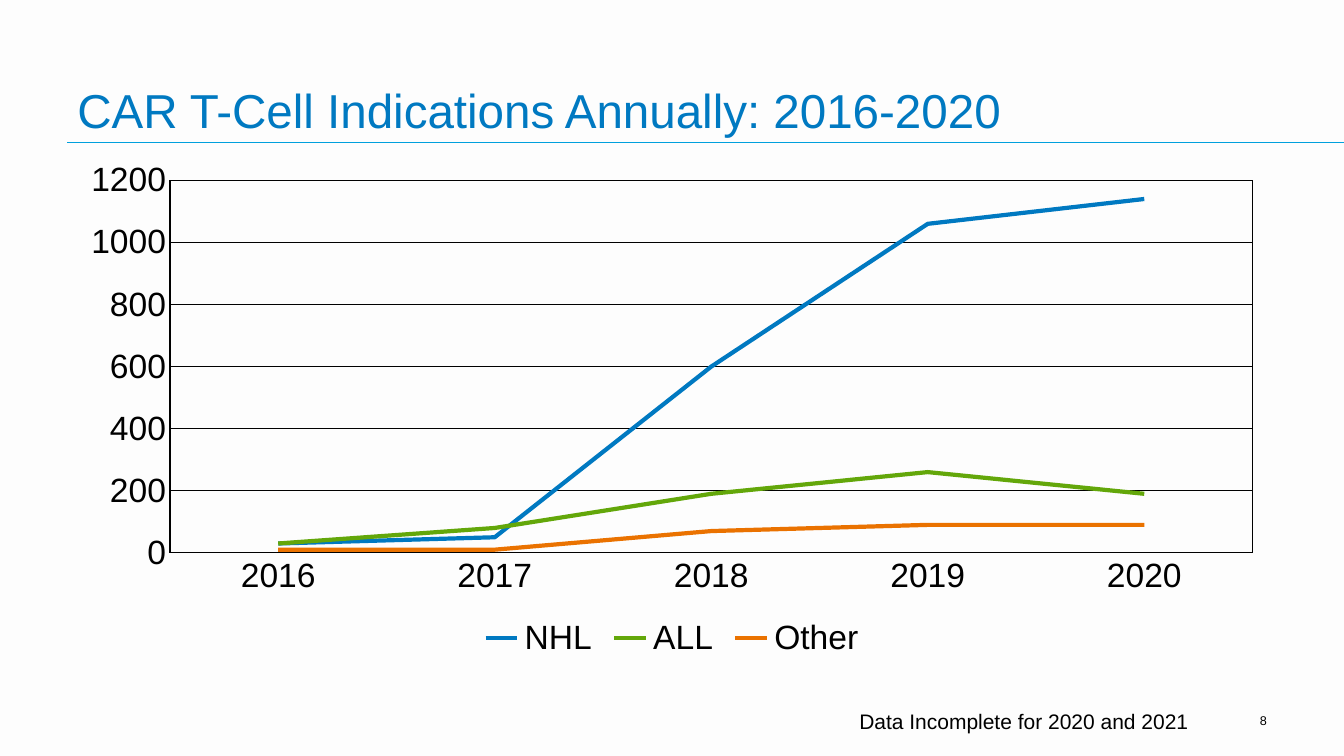
from dataclasses import dataclass

from pptx import Presentation
from pptx.chart.data import CategoryChartData
from pptx.dml.color import RGBColor as RGB
from pptx.enum.chart import XL_CHART_TYPE as CT, XL_LEGEND_POSITION as LP, XL_TICK_MARK as TM
from pptx.enum.shapes import MSO_CONNECTOR as MC
from pptx.enum.text import MSO_ANCHOR as MA, MSO_AUTO_SIZE as AS, PP_ALIGN as PA
from pptx.oxml import parse_xml
from pptx.oxml.ns import nsdecls, qn
from pptx.util import Pt


@dataclass(frozen=True)
class Theme:
    font: str = "Arial"
    background: str = "FDFDFD"
    text: str = "000000"
    title: str = "0079C1"
    rule: str = "00A0DD"
    series: tuple = ("0079C1", "63A70A", "EA7200")
    title_size: int = 34
    chart_size: int = 24
    note_size: int = 15
    number_size: int = 9
    thin: float = 0.75
    thick: float = 3


class SlideBuilder:
    def __init__(self, prs, theme):
        self.theme = theme
        self.slide = prs.slides.add_slide(prs.slide_layouts[5])
        fill = self.slide.background.fill
        fill.solid()
        fill.fore_color.rgb = RGB.from_string(theme.background)

    def style_font(self, font, size, color):
        font.name = self.theme.font
        font.size = Pt(size)
        font.bold = False
        font.color.rgb = RGB.from_string(color)

    def style_line(self, line, color, width):
        line.color.rgb = RGB.from_string(color)
        line.width = Pt(width)

    def fill_text(self, sp, text, size, color, align, anchor):
        tf = sp.text_frame
        tf.text = text
        tf.word_wrap = True
        tf.auto_size = AS.NONE
        tf.vertical_anchor = anchor
        p = tf.paragraphs[0]
        p.alignment = align
        self.style_font(p.runs[0].font, size, color)

    def title(self, text, x, y, w, h):
        sp = self.slide.shapes.title
        sp.left, sp.top, sp.width, sp.height = Pt(x), Pt(y), Pt(w), Pt(h)
        self.fill_text(sp, text, self.theme.title_size, self.theme.title, PA.LEFT, MA.BOTTOM)

    def footer(self, text, x, y, w, h, size):
        sp = self.slide.shapes.add_textbox(Pt(x), Pt(y), Pt(w), Pt(h))
        self.fill_text(sp, text, size, self.theme.text, PA.RIGHT, MA.MIDDLE)

    def rule(self, x1, x2, y):
        cn = self.slide.shapes.add_connector(MC.STRAIGHT, Pt(x1), Pt(y), Pt(x2), Pt(y))
        self.style_line(cn.line, self.theme.rule, self.theme.thin)
        cn._element.spPr.append(parse_xml(f"<a:effectLst {nsdecls('a')}/>"))

    def axis(self, axis):
        t = self.theme
        axis.major_tick_mark = axis.minor_tick_mark = TM.NONE
        self.style_font(axis.tick_labels.font, t.chart_size, t.text)
        self.style_line(axis.format.line, t.text, t.thin)

    def plot_area(self, chart, x, y, w, h):
        area = chart._chartSpace.chart.plotArea
        for old in area.findall(qn("c:layout")):
            area.remove(old)
        area.insert(0, parse_xml(
            f'<c:layout {nsdecls("c")}><c:manualLayout><c:layoutTarget val="inner"/>'
            f'<c:xMode val="edge"/><c:yMode val="edge"/><c:x val="{x}"/><c:y val="{y}"/>'
            f'<c:w val="{w}"/><c:h val="{h}"/></c:manualLayout></c:layout>'))
        area.append(parse_xml(
            f'<c:spPr {nsdecls("c", "a")}><a:noFill/><a:ln w="{Pt(self.theme.thin)}"><a:solidFill>'
            f'<a:srgbClr val="{self.theme.text}"/></a:solidFill></a:ln></c:spPr>'))

    def line_chart(self, cats, series, x, y, w, h):
        t = self.theme
        data = CategoryChartData()
        data.categories = cats
        for name, values in series.items():
            data.add_series(name, values)
        chart = self.slide.shapes.add_chart(CT.LINE, Pt(x), Pt(y), Pt(w), Pt(h), data).chart
        chart.has_title = False
        self.style_font(chart.font, t.chart_size, t.text)
        for axis in (chart.category_axis, chart.value_axis):
            self.axis(axis)
        va = chart.value_axis
        va.minimum_scale, va.maximum_scale, va.major_unit = 0, 1200, 200
        self.style_line(va.major_gridlines.format.line, t.text, t.thin)
        chart.has_legend = True
        chart.legend.position = LP.BOTTOM
        chart.legend.include_in_layout = False
        self.style_font(chart.legend.font, t.chart_size, t.text)
        plot = chart.plots[0]
        plot.vary_by_categories = False
        for s, color in zip(plot.series, t.series):
            s.smooth = False
            self.style_line(s.format.line, color, t.thick)
        self.plot_area(chart, 0.085, 0.057, 0.895, 0.727)


def main():
    prs = Presentation()
    prs.slide_width, prs.slide_height = Pt(960), Pt(540)
    theme = Theme()
    s = SlideBuilder(prs, theme)
    s.rule(48, 960, 102)
    s.title("CAR T-Cell Indications Annually: 2016-2020", 48, 12, 728, 90)
    s.line_chart(
        ["2016", "2017", "2018", "2019", "2020"],
        {
            "NHL": (30, 50, 600, 1060, 1140),
            "ALL": (30, 80, 190, 260, 190),
            "Other": (10, 10, 70, 90, 90),
        },
        48, 108, 864, 366)
    s.footer("Data Incomplete for 2020 and 2021", 328, 500.4, 528, 28.8, theme.note_size)
    s.footer("8", 864, 500.4, 48, 28.8, theme.number_size)
    prs.save("out.pptx")


if __name__ == "__main__":
    main()
